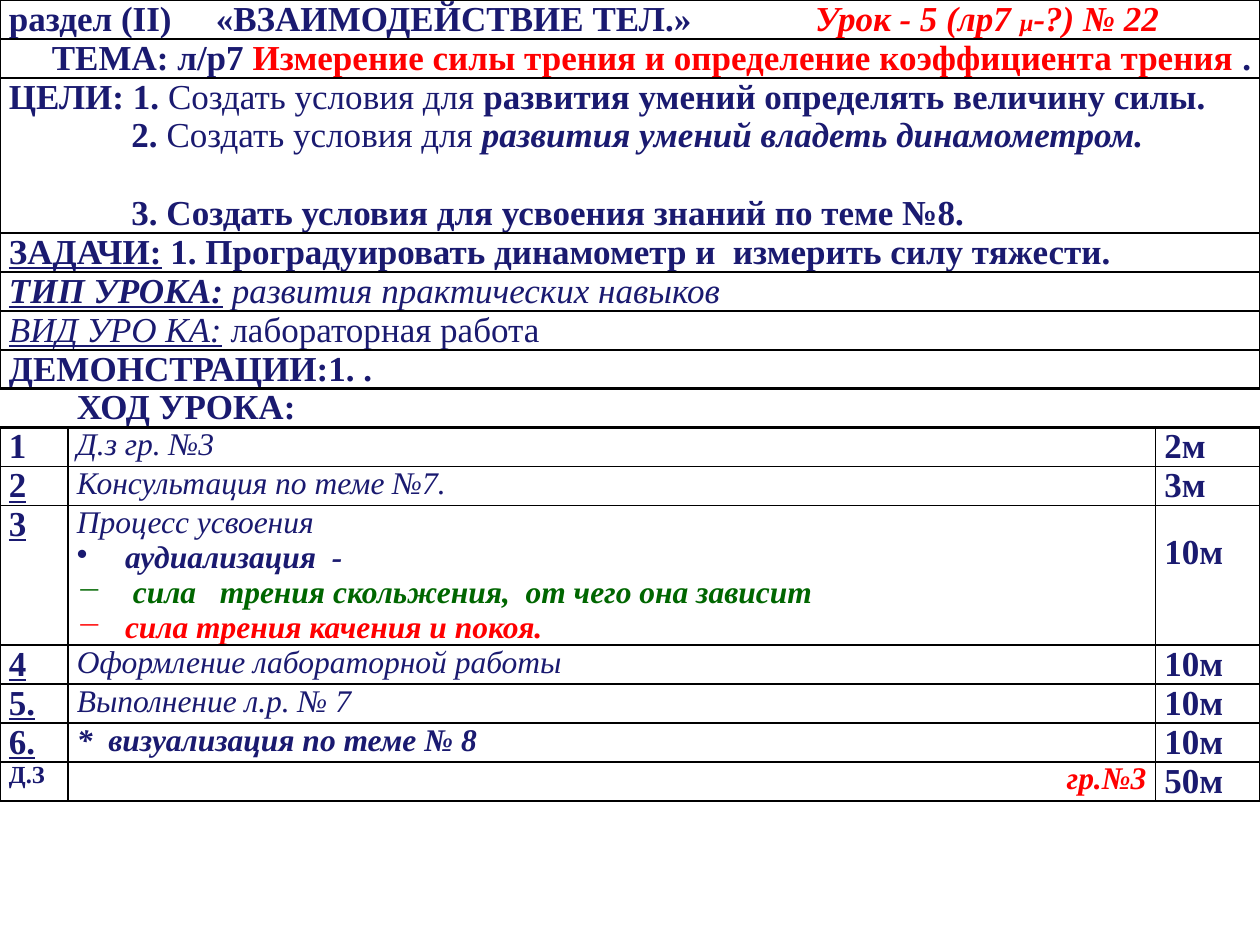
from dataclasses import dataclass

from lxml import etree
from pptx import Presentation
from pptx.dml.color import RGBColor
from pptx.enum.text import PP_ALIGN
from pptx.oxml.ns import qn
from pptx.util import Cm, Pt

RIGHT = PP_ALIGN.RIGHT
BLANK_LAYOUT = 6


@dataclass(frozen=True)
class Theme:
    font: str = "Times New Roman"
    navy: str = "1A1A70"
    red: str = "FF0000"
    green: str = "006600"
    line: str = "000000"
    large: int = 20
    medium: int = 18
    small: int = 14
    thin: float = 1
    thick: float = 1.5


THEME = Theme()
COLUMN_WIDTHS = (1.37, 21.92, 2.11)
LINE_HEIGHT = 0.78
ROW_COUNT = 15
TALL_ROWS = {2: 4 * LINE_HEIGHT, 10: 2.82}
FLOW_ROW = 7
THICK_EDGES = {1, 2, 6, 7, 8, 13, 14, 15}  # horizontal lines, counted from the top


def run(text, style="", color=THEME.navy, size=THEME.large):
    """Describe a run; style holds any of the letters b, i and u."""
    return text, style, color, size


def add_paragraph(cell, runs, first=True, align=None):
    frame = cell.text_frame
    paragraph = frame.paragraphs[0] if first else frame.add_paragraph()
    paragraph.alignment = align
    for text, style, color, size in runs:
        part = paragraph.add_run()
        part.text = text
        font = part.font
        font.name, font.size = THEME.font, Pt(size)
        font.bold, font.italic, font.underline = (key in style for key in "biu")
        font.color.rgb = RGBColor.from_string(color)
    return paragraph


def indent(paragraph, left, bullet=None):
    properties = paragraph._p.get_or_add_pPr()
    properties.set("marL", str(Cm(left)))
    properties.set("indent", str(-Cm(left) if bullet else 0))
    if bullet:
        etree.SubElement(properties, qn("a:buChar")).set("char", bullet)


def set_tabs(paragraph, stops):
    tabs = etree.SubElement(paragraph._p.get_or_add_pPr(), qn("a:tabLst"))
    for stop in stops:
        tab = etree.SubElement(tabs, qn("a:tab"))
        tab.set("pos", str(Cm(stop)))
        tab.set("algn", "l")


def set_borders(cell, widths):
    """Draw left, right, top and bottom lines; a width of 0 leaves one out."""
    properties = cell._tc.get_or_add_tcPr()
    for index, (side, width) in enumerate(zip("LRTB", widths)):
        line = etree.Element(qn(f"a:ln{side}"))
        line.set("w", str(Pt(width)))
        if width:
            fill = etree.SubElement(line, qn("a:solidFill"))
            etree.SubElement(fill, qn("a:srgbClr")).set("val", THEME.line)
        else:
            etree.SubElement(line, qn("a:noFill"))
        properties.insert(index, line)


def vertical_widths(row):
    if row < FLOW_ROW:
        return (THEME.thin,) * 4
    if row == FLOW_ROW:
        return (0,) * 4
    divider = THEME.thin if row == ROW_COUNT - 1 else THEME.thick
    return THEME.thick, divider, THEME.thin, THEME.thin


def add_grid(slide, left, top, width):
    """Empty ruled table whose rows above the lesson flow span all columns."""
    heights = [TALL_ROWS.get(row, LINE_HEIGHT) for row in range(ROW_COUNT)]
    table = slide.shapes.add_table(
        ROW_COUNT, len(COLUMN_WIDTHS), left, top, width, Cm(sum(heights))).table
    table.first_row = table.horz_banding = False
    for column, column_width in zip(table.columns, COLUMN_WIDTHS):
        column.width = Cm(column_width)
    for row, height in enumerate(heights):
        table.rows[row].height = Cm(height)
        edges = [THEME.thick if edge in THICK_EDGES else THEME.thin
                 for edge in (row, row + 1)]
        verticals = vertical_widths(row)
        for column, cell in enumerate(table.rows[row].cells):
            cell.margin_left = cell.margin_right = Cm(0.18)
            cell.margin_top = cell.margin_bottom = 0
            cell.fill.background()
            set_borders(cell, (*verticals[column:column + 2], *edges))
            cell.text_frame.paragraphs[0].font.size = Pt(THEME.small)
        if row < FLOW_ROW:
            table.cell(row, 0).merge(table.cell(row, len(COLUMN_WIDTHS) - 1))
    return table


def fill_lesson_heading(table):
    # Section and lesson number
    title = add_paragraph(table.cell(0, 0), [
        run("раздел (II)\t«ВЗАИМОДЕЙСТВИЕ ТЕЛ.»\t", "b"),
        run("Урок - 5 (лр7 ", "bi", THEME.red),
        run("μ", "bi", THEME.red, THEME.small),
        run("-?) № 22", "bi", THEME.red)])
    set_tabs(title, (4.17, 16.25))

    # Topic
    add_paragraph(table.cell(1, 0), [
        run("ТЕМА: л/р7 ", "b"),
        run("Измерение силы трения и определение коэффициента трения", "b", THEME.red),
        run(" .", "b")], align=RIGHT)

    # Goals
    goals = table.cell(2, 0)
    add_paragraph(goals, [
        run("ЦЕЛИ: 1.", "b"), run(" Создать условия для"),
        run(" развития умений определять величину силы.", "b")])
    second = add_paragraph(goals, [
        run("2. ", "b"), run("Создать условия для "),
        run("развития умений владеть динамометром.", "bi")], first=False)
    third = add_paragraph(goals, [
        run("3. Создать условия для усвоения знаний по теме №8.", "b")], first=False)
    third.space_before = Cm(LINE_HEIGHT)
    for paragraph in (second, third):
        indent(paragraph, 2.47)

    # Tasks, type, kind, demonstrations
    details = [
        [run("ЗАДАЧИ:", "bu"),
         run(" 1. Проградуировать динамометр и  измерить силу тяжести.", "b")],
        [run("ТИП УРОКА:", "biu"), run(" развития практических навыков", "i")],
        [run("ВИД УРО КА:", "iu"), run(" лабораторная работа")],
        [run("ДЕМОНСТРАЦИИ:1. .", "b")]]
    for row, runs in enumerate(details, start=3):
        add_paragraph(table.cell(row, 0), runs)


def fill_lesson_flow(table):
    add_paragraph(table.cell(FLOW_ROW, 1), [run("ХОД УРОКА:", "b")])

    # Number, activity, minutes
    steps = [
        (run("1", "b"), "Д.з гр. №3", "i", "2м"),
        (run("2", "bu"), "Консультация по теме №7.", "i", "3м"),
        (run("3", "bu"), "Процесс усвоения", "i", "10м"),
        (run("4", "bu"), "Оформление лабораторной работы", "i", "10м"),
        (run("5.", "bu"), "Выполнение л.р. № 7", "i", "10м"),
        (run("6.", "bu"), "*  визуализация по теме № 8", "bi", "10м"),
        (run("Д.З", "b", size=THEME.small), "гр.№3", "bi", "50м")]
    for row, (number, activity, style, minutes) in enumerate(steps, FLOW_ROW + 1):
        homework = row == ROW_COUNT - 1
        color = THEME.red if homework else THEME.navy
        add_paragraph(table.cell(row, 0), [number])
        add_paragraph(table.cell(row, 1), [run(activity, style, color, THEME.medium)],
                      align=RIGHT if homework else None)
        add_paragraph(table.cell(row, 2), [run(minutes, "b")])

    # Points of the third step
    points = [
        ("•", "аудиализация  -", THEME.navy),
        ("−", " сила   трения скольжения,  от чего она зависит", THEME.green),
        ("−", "сила трения качения и покоя.", THEME.red)]
    for bullet, text, color in points:
        point = add_paragraph(table.cell(10, 1), [run(text, "bi", color, THEME.medium)],
                              first=False)
        indent(point, 0.97, bullet)
    table.cell(10, 2).margin_top = Cm(0.57)


def main():
    presentation = Presentation()
    presentation.slide_width, presentation.slide_height = Cm(25.4), Cm(19.05)
    slide = presentation.slides.add_slide(presentation.slide_layouts[BLANK_LAYOUT])
    table = add_grid(slide, 0, 0, presentation.slide_width)
    fill_lesson_heading(table)
    fill_lesson_flow(table)
    presentation.save("out.pptx")


if __name__ == "__main__":
    main()
